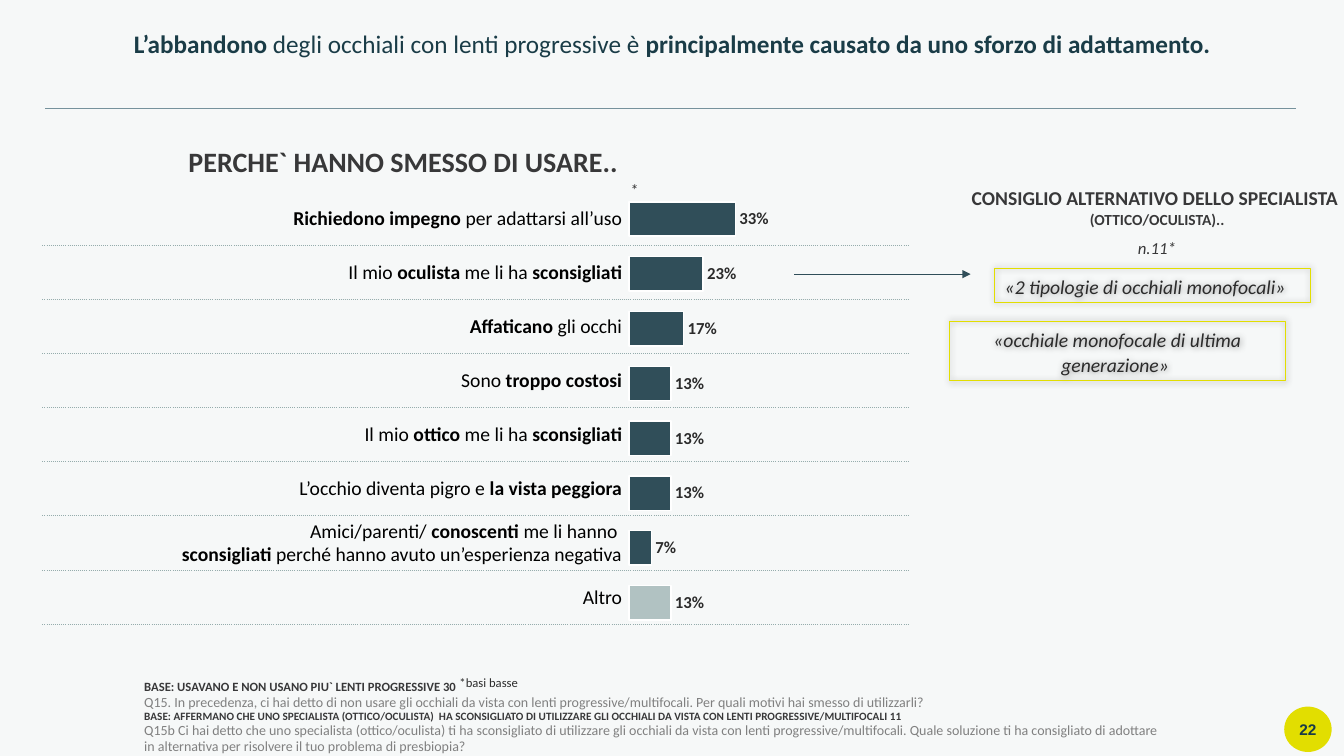
"""Build the slide on why wearers give up progressive lenses."""
from dataclasses import dataclass
from lxml.etree import SubElement
from pptx import Presentation
from pptx.chart.data import CategoryChartData
from pptx.dml.color import RGBColor
from pptx.enum.chart import XL_CHART_TYPE, XL_LABEL_POSITION
from pptx.enum.shapes import MSO_CONNECTOR, MSO_SHAPE
from pptx.enum.text import MSO_ANCHOR, MSO_AUTO_SIZE, PP_ALIGN
from pptx.oxml import parse_xml
from pptx.oxml.ns import nsdecls, qn
from pptx.util import Inches, Pt


@dataclass(frozen=True)
class Theme:
    font: str = "Calibri"
    background: str = "F6F8F8"
    title: str = "1A3C47"
    badge_text: str = "193B47"
    heading: str = "383839"
    body: str = "2B2B2B"
    label: str = "000000"
    question: str = "808080"
    rule: str = "76929C"
    dotted: str = "95ACAC"
    bar: str = "304E59"
    other_bar: str = "B1C2C2"
    bar_edge: str = "FFFFFF"
    accent: str = "E2DE00"
    heading_size: int = 20
    title_size: int = 18
    text_size: int = 14
    note_size: int = 12
    small_size: int = 11
    question_size: int = 10
    base_size: int = 9
    tiny_size: int = 8


theme = Theme()
color = RGBColor.from_string
presentation = Presentation()
presentation.slide_width, presentation.slide_height = Inches(13.33), Inches(7.5)
slide = presentation.slides.add_slide(presentation.slide_layouts[5])
slide.background.fill.solid()
slide.background.fill.fore_color.rgb = color(theme.background)


def box(left, top, width, height):
    """Turn percentages of the slide's size into lengths."""
    across, down = presentation.slide_width / 100, presentation.slide_height / 100
    return [int(length) for length in (left * across, top * down, width * across, height * down)]


def write(frame, text, size=theme.text_size, ink=theme.heading, bold=False, italic=False,
          align=PP_ALIGN.LEFT, spacing=None, font=theme.font):
    """Write paragraphs, one a line; ** switches bold on and off."""
    for line in text.split("\n"):
        paragraph = frame.add_paragraph() if frame.text else frame.paragraphs[0]
        paragraph.alignment = align
        if spacing:
            paragraph.line_spacing = spacing
        for index, part in enumerate(line.split("**")):
            if part:
                run = paragraph.add_run()
                run.text = part
                run.font.name, run.font.size = font, Pt(size)
                run.font.bold, run.font.italic = bold or index % 2 == 1, italic
                run.font.color.rgb = color(ink)


title = slide.shapes.title
title.left, title.top, title.width, title.height = box(2.55, 3.07, 94.95, 5.33)
title.text_frame.auto_size = MSO_AUTO_SIZE.NONE
title.text_frame.vertical_anchor = MSO_ANCHOR.TOP
write(title.text_frame, "**L’abbandono** degli occhiali con lenti progressive è "
      "**principalmente causato da uno sforzo di adattamento.**",
      theme.title_size, theme.title, align=PP_ALIGN.CENTER)

badge = slide.shapes.add_shape(MSO_SHAPE.OVAL, *box(95.55, 93.47, 3.53, 6))
badge.shadow.inherit = False
badge.fill.solid()
badge.fill.fore_color.rgb = color(theme.accent)
badge.line.fill.background()
badge_frame = badge.text_frame
badge_frame.margin_left = badge_frame.margin_right = 0
badge_frame.margin_top = badge_frame.margin_bottom = 0
badge_frame.vertical_anchor = MSO_ANCHOR.MIDDLE
write(badge_frame, "22", theme.small_size, theme.badge_text, bold=True,
      align=PP_ALIGN.CENTER, font="Arial")

notes = slide.shapes.add_textbox(*box(10.73, 87.47, 89.27, 12.4)).text_frame
notes.word_wrap = True
notes.vertical_anchor = MSO_ANCHOR.BOTTOM
notes.margin_left = notes.margin_right = notes.margin_top = notes.margin_bottom = 0
for text, size, ink, bold in (
    ("BASE: USAVANO E NON USANO PIU` LENTI PROGRESSIVE 30",
     theme.base_size, theme.heading, True),
    ("Q15. In precedenza, ci hai detto di non usare gli occhiali da vista con lenti "
     "progressive/multifocali. Per quali motivi hai smesso di utilizzarli?",
     theme.question_size, theme.question, False),
    ("BASE: AFFERMANO CHE UNO SPECIALISTA (OTTICO/OCULISTA)  HA SCONSIGLIATO DI UTILIZZARE "
     "GLI OCCHIALI DA VISTA CON LENTI PROGRESSIVE/MULTIFOCALI 11",
     theme.tiny_size, theme.heading, True),
    ("Q15b Ci hai detto che uno specialista (ottico/oculista) ti ha sconsigliato di utilizzare "
     "gli occhiali da vista con lenti progressive/multifocali. Quale soluzione ti ha consigliato "
     "di adottare\nin alternativa per risolvere il tuo problema di presbiopia?",
     theme.question_size, theme.question, False),
):
    write(notes, text, size, ink, bold, spacing=0.95)

reasons = (
    ("**Richiedono impegno** per adattarsi all’uso", 0.33),
    ("Il mio **oculista** me li ha **sconsigliati**", 0.23),
    ("**Affaticano** gli occhi", 0.17),
    ("Sono **troppo costosi**", 0.13),
    ("Il mio **ottico** me li ha **sconsigliati**", 0.13),
    ("L’occhio diventa pigro e **la vista peggiora**", 0.13),
    ("Amici/parenti/ **conoscenti** me li hanno \n"
     "**sconsigliati** perché hanno avuto un’esperienza negativa", 0.07),
    ("Altro", 0.13),
)
table_shape = slide.shapes.add_table(len(reasons), 2, *box(3.15, 25.33, 64.42, 57.2))
table = table_shape.table
table.first_row = table.horz_banding = False
for style in table_shape._element.iter(qn("a:tableStyleId")):
    style.text = "{2D5ABB26-0587-4C30-8999-92F81FD0307C}"
table.columns[0].width, table.columns[1].width = Inches(5.76), Inches(2.83)
for row, (reason, share) in enumerate(reasons):
    for column in range(2):
        cell = table.cell(row, column)
        cell.fill.background()
        cell.vertical_anchor = MSO_ANCHOR.MIDDLE
        cell.margin_left = cell.margin_right = cell.margin_top = Inches(0.01)
        cell.margin_bottom = 0
        cell._tc.get_or_add_tcPr().insert(0, parse_xml(
            f'<a:lnB {nsdecls("a")} w="6350"><a:solidFill><a:srgbClr val="{theme.dotted}"/>'
            '</a:solidFill><a:prstDash val="sysDot"/></a:lnB>'))
    write(table.cell(row, 0).text_frame, reason, ink=theme.label, align=PP_ALIGN.RIGHT)

data = CategoryChartData(number_format="0%")
data.categories = [str(number) for number in range(1, len(reasons) + 1)]
data.add_series("Series 1", [share for reason, share in reasons])
chart = slide.shapes.add_chart(XL_CHART_TYPE.BAR_CLUSTERED, *box(45.3, 24.13, 30, 61.07), data).chart
chart.has_legend = chart.has_title = False
chart.font.name, chart.font.size = theme.font, Pt(theme.base_size)
chart.font.color.rgb = color(theme.body)
chart.category_axis.reverse_order = True
chart.category_axis.visible = chart.value_axis.visible = False
chart.value_axis.has_major_gridlines = False
chart.value_axis.minimum_scale, chart.value_axis.maximum_scale = 0, 0.9
plot = chart.plots[0]
plot.gap_width, plot.vary_by_categories = 60, False
series = plot.series[0]
for bar, ink in ((series, theme.bar), (series.points[len(reasons) - 1], theme.other_bar)):
    bar.format.fill.solid()
    bar.format.fill.fore_color.rgb = color(ink)
    bar.format.line.color.rgb = color(theme.bar_edge)
    bar.format.line.width = Pt(1)
labels = series.data_labels
labels.show_value, labels.position = True, XL_LABEL_POSITION.OUTSIDE_END
labels.number_format, labels.number_format_is_linked = "0%", False
labels.font.name, labels.font.size, labels.font.bold = theme.font, Pt(theme.note_size), True
labels.font.color.rgb = color(theme.body)
plot_area = chart._chartSpace.chart.plotArea
for layout in plot_area.findall(qn("c:layout")):
    plot_area.remove(layout)
layout = parse_xml(f'<c:layout {nsdecls("c")}><c:manualLayout/></c:layout>')
for tag, value in (("layoutTarget", "inner"), ("xMode", "edge"), ("yMode", "edge"),
                   ("x", 0.05), ("y", 0.02), ("w", 0.72), ("h", 0.95)):
    SubElement(layout[0], qn(f"c:{tag}")).set("val", str(value))
plot_area.insert(0, layout)

for left, right, height, ink, arrow in ((3.38, 96.45, 14.4, theme.rule, False),
                                        (59.1, 72.22, 36.27, theme.bar, True)):
    start, level, end, _ = box(left, height, right, 0)
    connector = slide.shapes.add_connector(MSO_CONNECTOR.STRAIGHT, start, level, end, level)
    connector.line.color.rgb = color(ink)
    connector.line.width = Pt(0.5)
    if arrow:
        SubElement(connector.line._get_or_add_ln(), qn("a:tailEnd")).set("type", "triangle")
    SubElement(connector._element.spPr, qn("a:effectLst"))

for text, place, align in (
    ("«2 tipologie di occhiali monofocali»", (74.02, 35.47, 23.48, 4.53), PP_ALIGN.LEFT),
    ("«occhiale monofocale di ultima generazione» ", (70.65, 42.53, 24.98, 7.87), PP_ALIGN.CENTER),
):
    quote = slide.shapes.add_shape(MSO_SHAPE.RECTANGLE, *box(*place))
    quote.fill.background()
    quote.line.color.rgb = color(theme.accent)
    quote.line.width = Pt(0.75)
    quote._element.spPr.append(parse_xml(
        f'<a:effectLst {nsdecls("a")}><a:outerShdw blurRad="63500" dist="0" dir="0">'
        '<a:srgbClr val="000000"><a:alpha val="40000"/></a:srgbClr></a:outerShdw></a:effectLst>'))
    quote.text_frame.vertical_anchor = MSO_ANCHOR.TOP
    quote.text_frame.auto_size = MSO_AUTO_SIZE.SHAPE_TO_FIT_TEXT
    write(quote.text_frame, text, ink=theme.body, italic=True, align=align, spacing=1.07)

bold_center = {"bold": True, "align": PP_ALIGN.CENTER}
for place, wrap, lines in (
    ((6.38, 18.4, 47.25, 5.87), True,
     [("PERCHE` HANNO SMESSO DI USARE..", {"size": theme.heading_size, **bold_center})]),
    ((62.48, 24, 47.25, 6.93), True,
     [("CONSIGLIO ALTERNATIVO DELLO SPECIALISTA ", bold_center),
      ("(OTTICO/OCULISTA)..", {"size": theme.small_size, **bold_center})]),
    ((83.92, 30.8, 4.42, 4), False, [("n.11*", {"size": theme.note_size, "italic": True})]),
    ((46.12, 23.07, 2.17, 4), False, [("*", {"size": theme.note_size, "italic": True})]),
    ((33.45, 88.67, 15.3, 3.33), True,
     [("*basi basse", {"size": theme.base_size, "ink": theme.body})]),
):
    frame = slide.shapes.add_textbox(*box(*place)).text_frame
    frame.word_wrap = wrap
    frame.auto_size = MSO_AUTO_SIZE.SHAPE_TO_FIT_TEXT
    for text, style in lines:
        write(frame, text, **style)

presentation.save("out.pptx")
